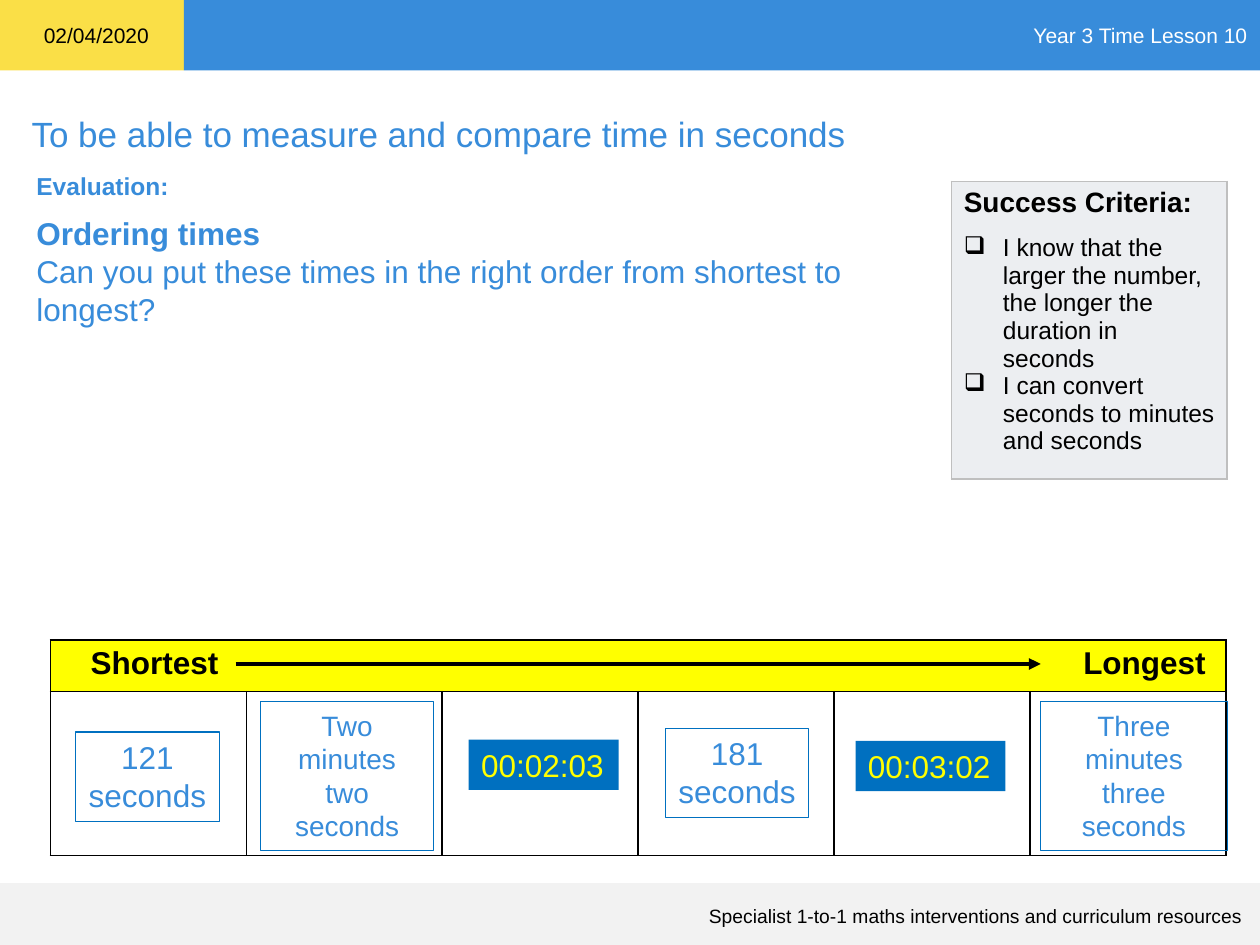
from lxml.etree import SubElement
from pptx import Presentation
from pptx.dml.color import RGBColor
from pptx.enum.shapes import MSO_CONNECTOR, MSO_SHAPE
from pptx.enum.text import MSO_ANCHOR, PP_ALIGN
from pptx.oxml import parse_xml
from pptx.oxml.ns import nsdecls, qn
from pptx.util import Inches, Pt

BLUE, DARK, YELLOW = "388CDA", "0070C0", "FFFF00"
LEFT, MID, RIGHT = PP_ALIGN.LEFT, PP_ALIGN.CENTER, PP_ALIGN.RIGHT


def style(frame, size, color, align=LEFT, bold=False, anchor=MSO_ANCHOR.TOP):
    frame.word_wrap = True
    frame.vertical_anchor = anchor
    for par in frame.paragraphs:
        par.alignment = align
        for run in par.runs:
            run.font.name = "Arial"
            run.font.size = Pt(size)
            run.font.bold = bold
            run.font.color.rgb = RGBColor.from_string(color)


def paint(cell, fill, line):
    cell.fill.solid()
    cell.fill.fore_color.rgb = RGBColor.from_string(fill)
    props = cell._tc.get_or_add_tcPr()
    for i, side in enumerate("LRTB"):
        props.insert(i, parse_xml(
            f'<a:ln{side} {nsdecls("a")} w="12700"><a:solidFill>'
            f'<a:srgbClr val="{line}"/></a:solidFill></a:ln{side}>'))


prs = Presentation()
prs.slide_width, prs.slide_height = Inches(10), Inches(7.5)
slide = prs.slides.add_slide(prs.slide_layouts[5])
shapes = slide.shapes

# Title
title = shapes.title
title.left, title.top = Inches(0.15), Inches(0.84)
title.width, title.height = Inches(9.71), Inches(0.44)
title.text_frame.text = "To be able to measure and compare time in seconds"
style(title.text_frame, 20, BLUE)

# Header and footer bars
bars = [
    (0, 0, 1.46, 0.56, "FADF47", "", "000000"),
    (1.46, 0, 8.54, 0.56, BLUE, "Year 3 Time Lesson 10", "FFFFFF"),
    (0, 7.01, 10, 0.49, "F2F2F2", "", "000000"),
]
for x, y, w, h, fill, text, color in bars:
    bar = shapes.add_shape(MSO_SHAPE.RECTANGLE, Inches(x), Inches(y), Inches(w), Inches(h))
    bar.shadow.inherit = False
    bar.fill.solid()
    bar.fill.fore_color.rgb = RGBColor.from_string(fill)
    bar.line.fill.background()
    bar.text_frame.text = text
    style(bar.text_frame, 12, color, RIGHT, anchor=MSO_ANCHOR.MIDDLE)

# Text boxes
notes = [
    (0.25, 0.13, 1.04, 0.3, "02/04/2020", 12, "000000", LEFT, False),
    (0.42, 7.13, 9.54, 0.3, "Specialist 1-to-1 maths interventions and curriculum resources",
     11, "000000", RIGHT, False),
    (0.19, 1.31, 1.51, 0.34, "Evaluation:", 14, BLUE, LEFT, True),
    (0.19, 1.65, 7.36, 1.01, "Ordering times\nCan you put these times in the right order "
     "from shortest to longest?", 18, BLUE, LEFT, False),
]
for x, y, w, h, text, size, color, align, bold in notes:
    box = shapes.add_textbox(Inches(x), Inches(y), Inches(w), Inches(h))
    box.text_frame.text = text
    style(box.text_frame, size, color, align, bold)
box.text_frame.paragraphs[0].runs[0].font.bold = True

# Ordering table
table = shapes.add_table(2, 6, Inches(0.4), Inches(5.08), Inches(9.33), Inches(1.71)).table
table.rows[0].height, table.rows[1].height = Inches(0.41), Inches(1.3)
for row, fill in enumerate((YELLOW, "FFFFFF")):
    for cell in table.rows[row].cells:
        paint(cell, fill, "000000")
head = table.cell(0, 0)
head.merge(table.cell(0, 5))
head.margin_left = Inches(0.32)
par = head.text_frame.paragraphs[0]
tabs = SubElement(par._p.get_or_add_pPr(), qn("a:tabLst"))
SubElement(tabs, qn("a:tab"), pos=str(Inches(8.85)), algn="r")
par.text = "Shortest\tLongest"
style(head.text_frame, 18, "000000", bold=True)

# Arrow from shortest to longest
arrow = shapes.add_connector(MSO_CONNECTOR.STRAIGHT, Inches(1.87), Inches(5.27),
                             Inches(8.26), Inches(5.27))
arrow.line.color.rgb = RGBColor.from_string("000000")
arrow.line.width = Pt(2.25)
SubElement(arrow.line._get_or_add_ln(), qn("a:tailEnd"), type="triangle")
SubElement(arrow._element.spPr, qn("a:effectLst"))

# Time cards
cards = [
    (0.6, 5.81, 1.14, 0.71, "121\nseconds", 18, False),
    (2.07, 5.57, 1.37, 1.18, "Two\nminutes\ntwo\nseconds", 16, False),
    (3.72, 5.87, 1.19, 0.4, "00:02:03", 18, True),
    (5.28, 5.78, 1.14, 0.71, "181\nseconds", 18, False),
    (6.79, 5.88, 1.19, 0.4, "00:03:02", 18, True),
    (8.26, 5.57, 1.48, 1.18, "Three\nminutes\nthree seconds", 16, False),
]
for x, y, w, h, text, size, clock in cards:
    card = shapes.add_shape(MSO_SHAPE.RECTANGLE, Inches(x), Inches(y), Inches(w), Inches(h))
    card.shadow.inherit = False
    if clock:
        card.fill.solid()
        card.fill.fore_color.rgb = RGBColor.from_string(DARK)
        card.line.fill.background()
    else:
        card.fill.background()
        card.line.color.rgb = RGBColor.from_string(DARK)
        card.line.width = Pt(0.75)
    card.text_frame.text = text
    style(card.text_frame, size, YELLOW if clock else BLUE, LEFT if clock else MID)
    if not clock and size == 18:
        card.text_frame.word_wrap = False

# Success criteria
panel = shapes.add_table(1, 1, Inches(7.55), Inches(1.44), Inches(2.19), Inches(2.36)).table
cell = panel.cell(0, 0)
paint(cell, "ECEEF1", "BFBFBF")
frame = cell.text_frame
frame.text = ("Success Criteria:\n"
              "I know that the larger the number, the longer the duration in seconds\n"
              "I can convert seconds to minutes and seconds")
first, *goals = frame.paragraphs
for goal in goals:
    props = goal._p.get_or_add_pPr()
    props.set("marL", str(Inches(0.31)))
    props.set("indent", str(-Inches(0.31)))
    SubElement(props, qn("a:buChar"), char="❑")
style(frame, 14, "000000")
first.runs[0].font.size, first.runs[0].font.bold = Pt(16), True
goals[0].space_before = Pt(9)

prs.save("out.pptx")
